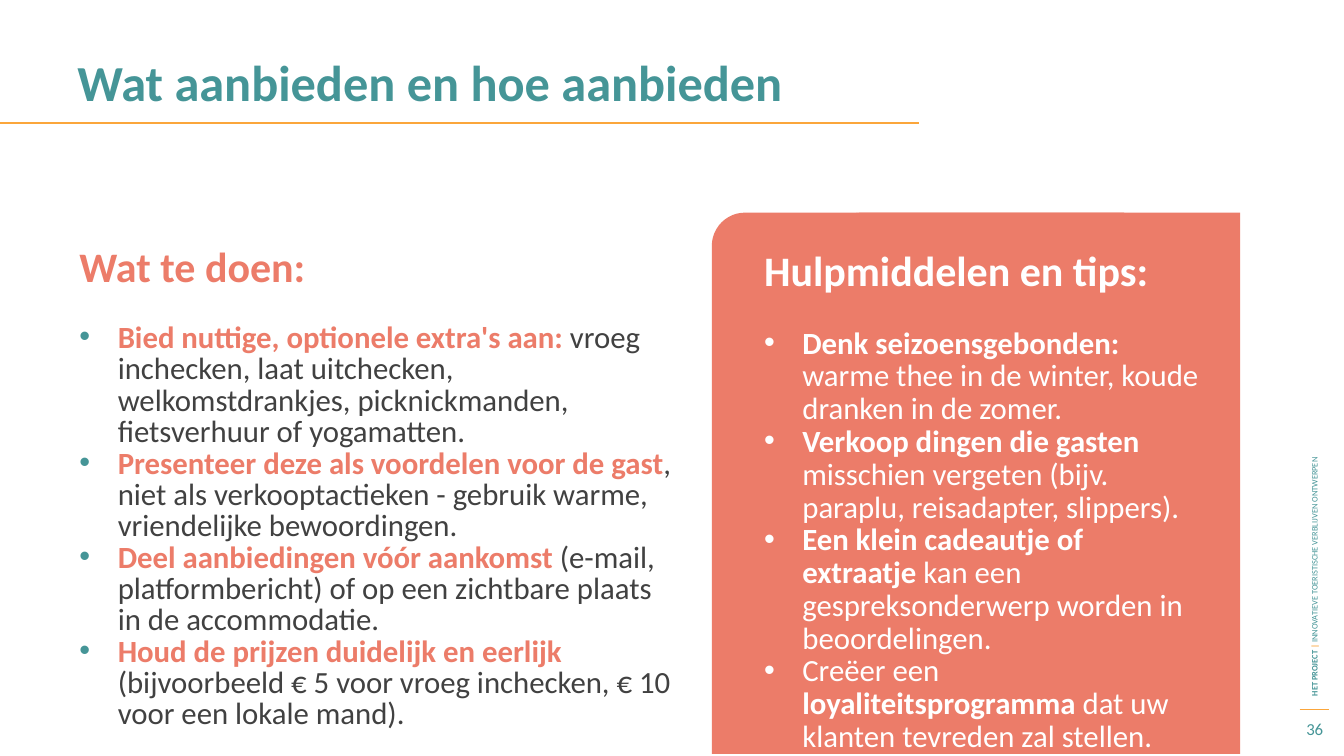
import dataclasses
import math

import lxml.etree
import pptx
import pptx.dml.color
import pptx.enum.shapes
import pptx.enum.text
import pptx.oxml.ns
import pptx.util

PX = 9144


@dataclasses.dataclass(frozen=True)
class Theme:
    font: str = "Calibri"
    teal: str = "459597"
    amber: str = "FBA63B"
    coral: str = "EC7C69"
    ink: str = "414141"
    white: str = "FFFFFF"
    title: int = 36
    head: int = 30
    body: int = 22
    page: int = 12
    small: int = 6


class Deck:
    """Draws styled elements on one slide, with lengths in px."""

    def __init__(self, theme, width, height):
        self.theme = theme
        self.file = pptx.Presentation()
        self.file.slide_width = width * PX
        self.file.slide_height = height * PX
        self.slide = self.file.slides.add_slide(self.file.slide_layouts[6])

    def color(self, code):
        return pptx.dml.color.RGBColor.from_string(code)

    def line(self, left, right, y, weight):
        line = self.slide.shapes.add_connector(
            pptx.enum.shapes.MSO_CONNECTOR.STRAIGHT, left * PX, y * PX, right * PX, y * PX)
        line.line.color.rgb = self.color(self.theme.amber)
        line.line.width = pptx.util.Pt(weight)
        lxml.etree.SubElement(line._element.spPr, pptx.oxml.ns.qn("a:effectLst"))

    def panel(self, left, top, width, height, curve, steps=12):
        right, base = left + width, top + height
        turns = [math.pi / 2 * n / steps for n in range(steps + 1)]
        arc = [(left + curve * (1 - math.cos(t)), top + curve * (1 - math.sin(t)))
               for t in turns]
        points = [(round(x * PX), round(y * PX))
                  for x, y in arc + [(right, top), (right, base), (left, base)]]
        draft = self.slide.shapes.build_freeform(*points[0])
        draft.add_line_segments(points[1:], close=True)
        shape = draft.convert_to_shape()
        shape.shadow.inherit = False
        shape.fill.solid()
        shape.fill.fore_color.rgb = self.color(self.theme.coral)
        shape.line.fill.background()

    def box(self, left, top, width, height, middle=False, turn=0):
        box = self.slide.shapes.add_textbox(left * PX, top * PX, width * PX, height * PX)
        box.rotation = turn
        frame = box.text_frame
        frame.word_wrap = True
        if middle:
            frame.vertical_anchor = pptx.enum.text.MSO_ANCHOR.MIDDLE
        return frame

    def para(self, frame, parts, size, lead=None, dot=None):
        para = frame.add_paragraph() if frame.text else frame.paragraphs[0]
        if lead:
            para.line_spacing = pptx.util.Pt(lead)
        if dot:
            self.bullet(para, dot)
        for text, color, bold in parts:
            run = para.add_run()
            run.text = text
            run.font.name = self.theme.font
            run.font.size = pptx.util.Pt(size)
            run.font.bold = bold
            run.font.color.rgb = self.color(color)
        return para

    def bullet(self, para, color):
        props = para._p.get_or_add_pPr()
        props.set("marL", str(38 * PX))
        props.set("indent", str(-38 * PX))
        tint = lxml.etree.SubElement(props, pptx.oxml.ns.qn("a:buClr"))
        lxml.etree.SubElement(tint, pptx.oxml.ns.qn("a:srgbClr"), val=color)
        lxml.etree.SubElement(props, pptx.oxml.ns.qn("a:buFont"), typeface="Arial")
        lxml.etree.SubElement(props, pptx.oxml.ns.qn("a:buChar"), char="•")


TODO = [
    ("Bied nuttige, optionele extra's aan: ",
     "vroeg inchecken, laat uitchecken, welkomstdrankjes, picknickmanden, "
     "fietsverhuur of yogamatten."),
    ("Presenteer deze als voordelen voor de gast",
     ", niet als verkooptactieken - gebruik warme, vriendelijke bewoordingen."),
    ("Deel aanbiedingen vóór aankomst ",
     "(e-mail, platformbericht) of op een zichtbare plaats in de accommodatie."),
    ("Houd de prijzen duidelijk en eerlijk ",
     "(bijvoorbeeld € 5 voor vroeg inchecken, € 10 voor een lokale mand)."),
]

TIPS = [
    [("Denk seizoensgebonden: ", True),
     ("warme thee in de winter, koude dranken in de zomer.", False)],
    [("Verkoop dingen die gasten ", True),
     ("misschien vergeten (bijv. paraplu, reisadapter, slippers).", False)],
    [("Een klein cadeautje of extraatje ", True),
     ("kan een gespreksonderwerp worden in beoordelingen.", False)],
    [("Creëer een ", False), ("loyaliteitsprogramma ", True),
     ("dat uw klanten tevreden zal stellen.", False)],
]


def main():
    look = Theme()
    deck = Deck(look, 1333, 750)

    deck.line(1289, 1318, 704, 0.75)
    side = deck.box(1015, 402, 577, 20, middle=True, turn=270)
    deck.para(side, [("HET PROJECT ", look.teal, True), ("| ", look.amber, True),
                     ("INNOVATIEVE TOERISTISCHE VERBLIJVEN ONTWERPEN", look.teal, False)],
              look.small)
    page = deck.box(1278, 706, 52, 34, middle=True)
    number = deck.para(page, [("36", look.teal, False)], look.page)
    number.alignment = pptx.enum.text.PP_ALIGN.CENTER

    title = deck.box(67, 54, 1200, 88)
    deck.para(title, [("Wat aanbieden en hoe aanbieden", look.teal, True)], look.title, 37.2)
    deck.line(0, 911, 122, 1.5)

    head = deck.box(69, 243, 614, 88)
    deck.para(head, [("Wat te doen:", look.coral, True)], look.head, 29)
    todo = deck.box(69, 316, 614, 400)
    for lead, rest in TODO:
        deck.para(todo, [(lead, look.coral, True), (rest, look.ink, False)],
                  look.body, 22.4, look.teal)

    for left in (821, 706):
        deck.panel(left, 211, 409, 537, 33)
    tips = deck.box(748, 255, 456, 359)
    head = deck.para(tips, [("Hulpmiddelen en tips:", look.white, True)], look.head, 23.4)
    head.space_after = pptx.util.Pt(23.4)
    for parts in TIPS:
        deck.para(tips, [(text, look.white, bold) for text, bold in parts],
                  look.body, 23.4, look.white)

    deck.file.save("out.pptx")


if __name__ == "__main__":
    main()
